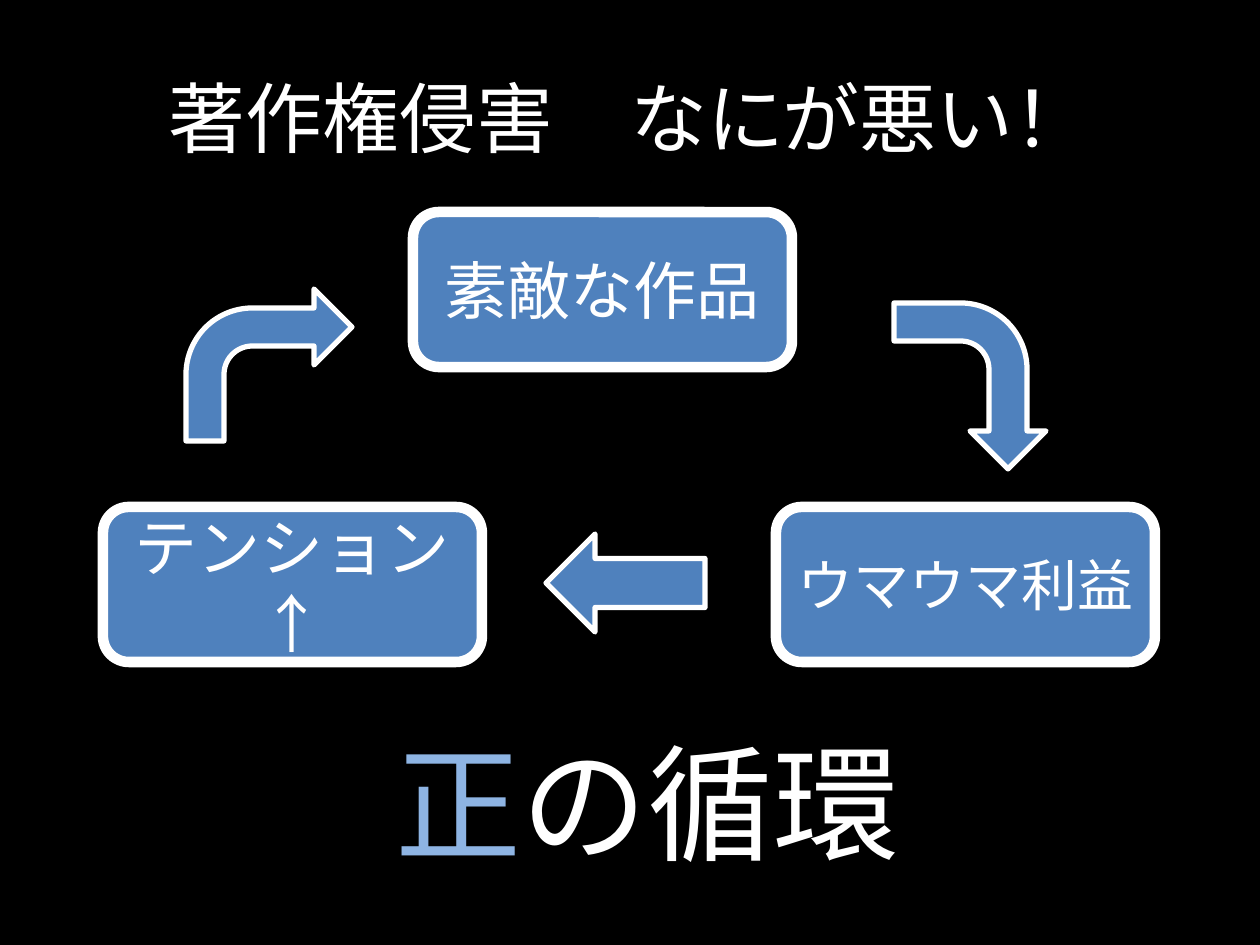
"""Build a one-slide deck showing a three-step cycle on a black background."""
from dataclasses import dataclass

from pptx import Presentation
from pptx.dml.color import RGBColor as Color
from pptx.enum.shapes import MSO_SHAPE as Shape
from pptx.enum.text import MSO_ANCHOR as Anchor, PP_ALIGN as Align
from pptx.util import Pt

EMU_PER_PX = 914400 / 126


@dataclass(frozen=True)
class Theme:
    font: str = "Calibri"
    background: Color = Color(0, 0, 0)
    white: Color = Color(255, 255, 255)
    blue: Color = Color(0x4F, 0x81, 0xBD)
    accent: Color = Color(0x8E, 0xB4, 0xE3)
    title_size: int = 44
    step_size: int = 36
    small_step_size: int = 32
    closing_size: int = 72
    step_line: int = 6
    arrow_line: int = 3


theme = Theme()


def px(*lengths):
    return [round(length * EMU_PER_PX) for length in lengths]


def write(box, size, *spans):
    frame = box.text_frame
    frame.word_wrap = True
    frame.vertical_anchor = Anchor.MIDDLE
    para = frame.paragraphs[0]
    para.alignment = Align.CENTER
    para.font.name = theme.font
    para.font.size = Pt(size)
    for text, color in spans:
        span = para.add_run()
        span.text = text
        span.font.color.rgb = color


deck = Presentation()
deck.slide_width, deck.slide_height = px(1260, 945)
page = deck.slides.add_slide(deck.slide_layouts[6])
page.background.fill.solid()
page.background.fill.fore_color.rgb = theme.background

title = page.shapes.add_textbox(*px(63, 38, 1134, 158))
write(title, theme.title_size, ("著作権侵害　なにが悪い！", theme.white))

steps = [
    (413, 212, "素敵な作品", theme.step_size),
    (776, 507, "ウマウマ利益", theme.small_step_size),
    (103, 507, "テンション↑", theme.step_size),
]
arrows = [
    (Shape.BENT_ARROW, 186, 289, 166, 152, 0),
    (Shape.BENT_ARROW, 887, 310, 166, 152, 90),
    (Shape.LEFT_ARROW, 546, 534, 159, 98, 0),
]
outlined = []
for left, top, text, size in steps:
    step = page.shapes.add_shape(
        Shape.FLOWCHART_ALTERNATE_PROCESS, *px(left, top, 379, 155)
    )
    write(step, size, (text, theme.white))
    outlined.append((step, theme.step_line))
for kind, left, top, width, height, angle in arrows:
    arrow = page.shapes.add_shape(kind, *px(left, top, width, height))
    arrow.rotation = angle
    outlined.append((arrow, theme.arrow_line))

for shape, line_width in outlined:
    shape.shadow.inherit = False
    shape.fill.solid()
    shape.fill.fore_color.rgb = theme.blue
    shape.line.color.rgb = theme.white
    shape.line.width = Pt(line_width)

closing = page.shapes.add_textbox(*px(277, 719, 741, 165))
write(
    closing, theme.closing_size, ("正", theme.accent), ("の循環", theme.white)
)

deck.save("out.pptx")
